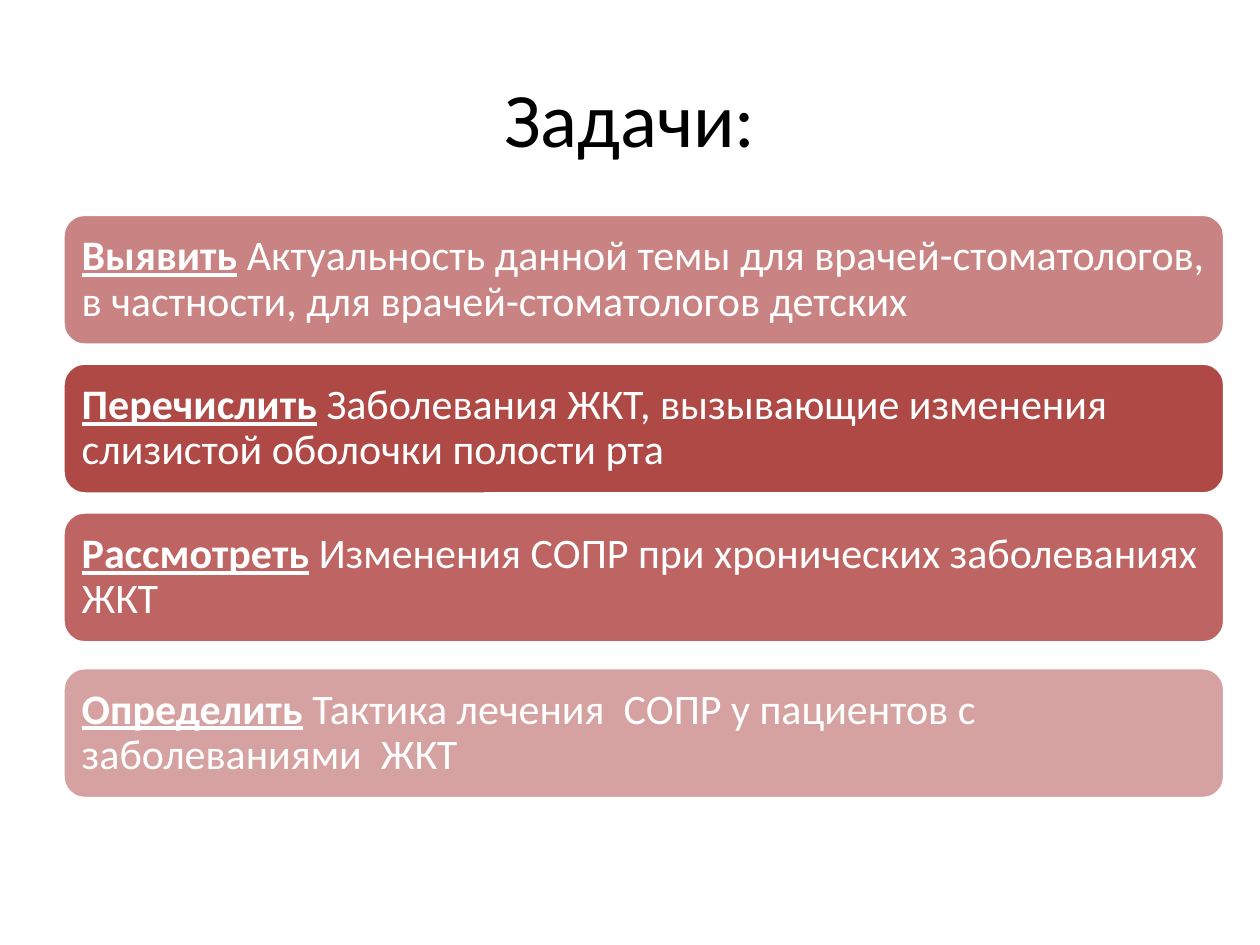
from pptx import Presentation
from pptx.dml.color import RGBColor
from pptx.enum.shapes import MSO_SHAPE as Kind
from pptx.enum.text import MSO_ANCHOR as Anchor, PP_ALIGN as Align
from pptx.util import Cm, Pt

TITLE = "Задачи:"
# top in cm, fill, key word, rest of the task
TASKS = [
    (4.32, "C98382", "Выявить",
     " Актуальность данной темы для врачей-стоматологов, "
     "в частности, для врачей-стоматологов детских"),
    (7.32, "AE4946", "Перечислить",
     " Заболевания ЖКТ, вызывающие изменения слизистой оболочки полости рта"),
    (10.32, "BE6462", "Рассмотреть",
     " Изменения СОПР при хронических заболеваниях ЖКТ"),
    (13.46, "D6A2A1", "Определить",
     " Тактика лечения  СОПР у пациентов с заболеваниями  ЖКТ"),
]
LEFT, WIDE, HIGH, INSET = 1.27, 23.42, 2.64, 0.25


def paint(part, color):
    part.rgb = RGBColor.from_string(color)


def style(par, size, color, align):
    par.alignment = align
    par.font.name = "Calibri"
    par.font.size = Pt(size)
    paint(par.font.color, color)


def add_title(slide):
    box = slide.shapes.add_textbox(Cm(LEFT), Cm(0.76), Cm(22.86), Cm(3.18))
    frame = box.text_frame
    frame.word_wrap = True
    frame.vertical_anchor = Anchor.MIDDLE
    par = frame.paragraphs[0]
    par.text = TITLE
    style(par, 44, "000000", Align.CENTER)


def add_task(slide, top, fill, key, rest):
    bar = slide.shapes.add_shape(Kind.ROUNDED_RECTANGLE,
                                 Cm(LEFT), Cm(top), Cm(WIDE), Cm(HIGH))
    bar.shadow.inherit = False
    bar.fill.solid()
    paint(bar.fill.fore_color, fill)
    paint(bar.line.color, "FFFFFF")
    bar.line.width = Pt(2)

    frame = bar.text_frame
    frame.word_wrap = True
    frame.vertical_anchor = Anchor.MIDDLE
    frame.margin_left = frame.margin_right = Cm(INSET)
    frame.margin_top = frame.margin_bottom = Cm(INSET)
    par = frame.paragraphs[0]
    par.line_spacing = 0.9
    style(par, 24, "FFFFFF", Align.LEFT)
    verb = par.add_run()
    verb.text = key
    verb.font.bold = verb.font.underline = True
    par.add_run().text = rest


def main():
    deck = Presentation()
    deck.slide_width, deck.slide_height = Cm(25.4), Cm(19.05)
    slide = deck.slides.add_slide(deck.slide_layouts[6])
    add_title(slide)
    for task in TASKS:
        add_task(slide, *task)
    deck.save("out.pptx")


if __name__ == "__main__":
    main()
